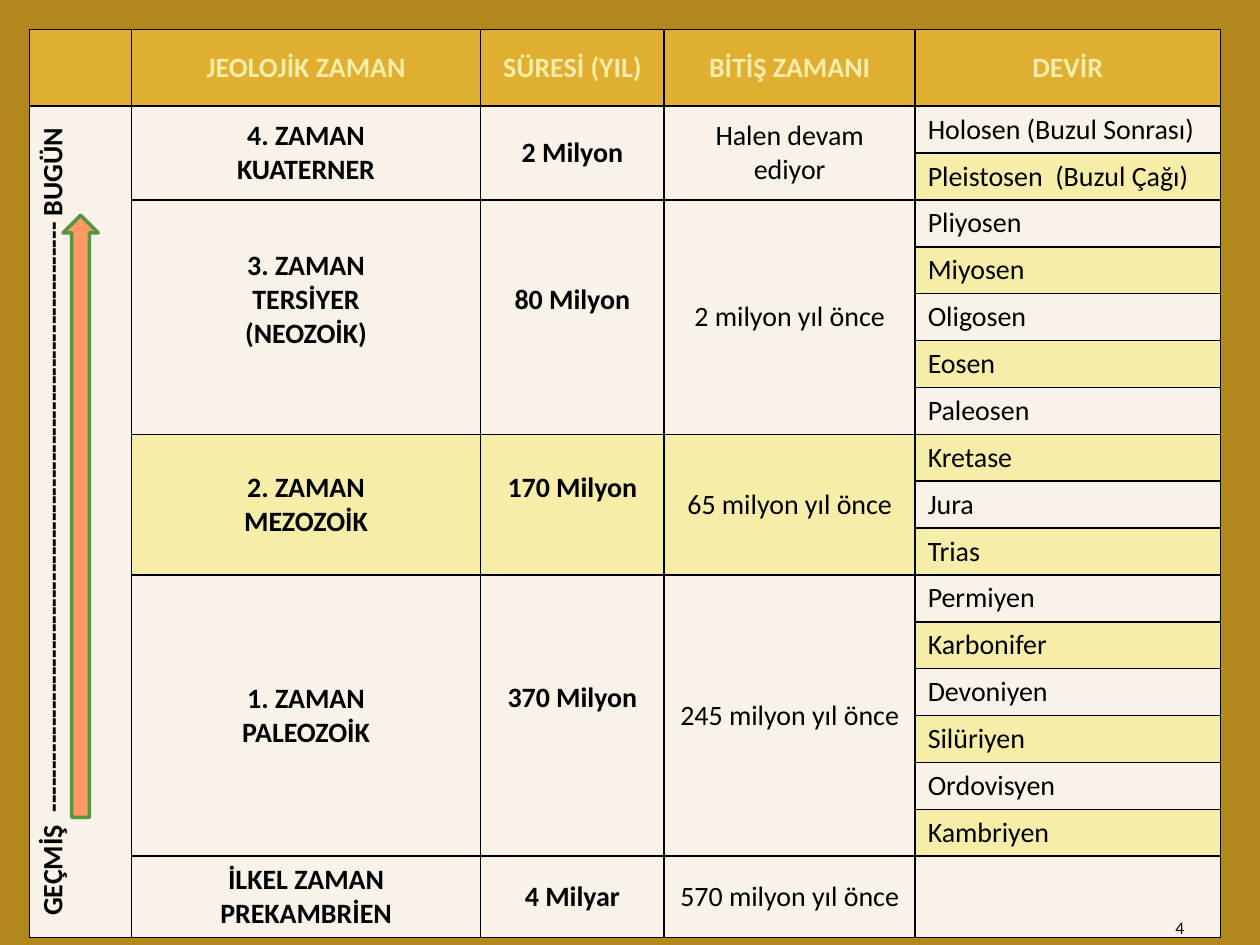
from pptx import Presentation
from pptx.dml.color import RGBColor
from pptx.enum.shapes import MSO_SHAPE as SHAPE
from pptx.enum.text import MSO_ANCHOR as ANCHOR, PP_ALIGN as ALIGN
from pptx.oxml import parse_xml
from pptx.oxml.ns import nsdecls
from pptx.util import Cm, Pt

BROWN = RGBColor(0xB2, 0x87, 0x1B)
GOLD = RGBColor(0xE0, 0xAE, 0x31)
CREAM = RGBColor(0xF9, 0xF2, 0xE8)
YELLOW = RGBColor(0xF6, 0xED, 0xA8)
ORANGE = RGBColor(0xFF, 0x99, 0x66)
GREEN = RGBColor(0x55, 0x95, 0x43)
BLACK = RGBColor(0, 0, 0)
FONT = "Calibri"

HEADERS = ["", "JEOLOJİK ZAMAN", "SÜRESİ (YIL)", "BİTİŞ ZAMANI", "DEVİR"]
TIMELINE = "GEÇMİŞ  " + "-" * 69 + " BUGÜN"
# Era, duration, end, periods, fill, columns whose text sits half a line higher
ERAS = [
    ("4. ZAMAN\nKUATERNER", "2 Milyon", "Halen devam ediyor",
     ["Holosen (Buzul Sonrası)", "Pleistosen  (Buzul Çağı)"], CREAM, ()),
    ("3. ZAMAN\nTERSİYER\n(NEOZOİK)", "80 Milyon", "2 milyon yıl önce",
     ["Pliyosen", "Miyosen", "Oligosen", "Eosen", "Paleosen"], CREAM, (1, 2)),
    ("2. ZAMAN\nMEZOZOİK", "170 Milyon", "65 milyon yıl önce",
     ["Kretase", "Jura", "Trias"], YELLOW, (2,)),
    ("1. ZAMAN\nPALEOZOİK", "370 Milyon", "245 milyon yıl önce",
     ["Permiyen", "Karbonifer", "Devoniyen", "Silüriyen", "Ordovisyen",
      "Kambriyen"], CREAM, (2,)),
    ("İLKEL ZAMAN\nPREKAMBRİEN", "4 Milyar", "570 milyon yıl önce",
     [""], CREAM, ()),
]
COL_WIDTHS = [2.06, 7.04, 3.7, 5.06, 6.15]
HEAD_H, PERIOD_H, LAST_H = 1.55, 0.93, 1.6


def add_borders(cell):
    tc_pr = cell._tc.get_or_add_tcPr()
    for side in ("lnL", "lnR", "lnT", "lnB"):
        tc_pr.append(parse_xml(
            f'<a:{side} {nsdecls("a")} w="12700"><a:solidFill>'
            f'<a:srgbClr val="{BLACK}"/></a:solidFill></a:{side}>'))


def fill_cell(cell, fill):
    cell.fill.solid()
    cell.fill.fore_color.rgb = fill


def write(tf, text, size=16, bold=False, color=BLACK, align=ALIGN.CENTER):
    tf.text = text
    for p in tf.paragraphs:
        p.alignment = align
        p.font.name = FONT
        p.font.size = Pt(size)
        p.font.bold = bold
        p.font.color.rgb = color


def add_era(table, top, era):
    """Write one era from row top and return the row after it."""
    *summary, periods, fill, raised = era
    last = top + len(periods) - 1
    for col, text in enumerate(summary, start=1):
        cell = table.cell(top, col)
        if last > top:
            cell.merge(table.cell(last, col))
        for row in range(top, last + 1):
            fill_cell(table.cell(row, col), fill)
        cell.vertical_anchor = ANCHOR.MIDDLE
        if col in raised:
            cell.margin_bottom = Cm(0.82)
        write(cell.text_frame, text, bold=col < 3)
    for row, period in enumerate(periods, start=top):
        cell = table.cell(row, 4)
        # Period stripes alternate down the whole table
        fill_cell(cell, CREAM if row % 2 else YELLOW)
        write(cell.text_frame, period, align=ALIGN.LEFT)
    return last + 1


def add_time_table(slide, left, top):
    n_rows = 1 + sum(len(era[3]) for era in ERAS)
    heights = [HEAD_H] + [PERIOD_H] * (n_rows - 2) + [LAST_H]
    table = slide.shapes.add_table(
        n_rows, len(HEADERS), left, top,
        Cm(sum(COL_WIDTHS)), Cm(sum(heights))).table
    table.horz_banding = False
    for column, width in zip(table.columns, COL_WIDTHS):
        column.width = Cm(width)
    for row, height in zip(table.rows, heights):
        row.height = Cm(height)
    for cell in table.iter_cells():
        add_borders(cell)

    # Header row
    for cell, text in zip(table.rows[0].cells, HEADERS):
        fill_cell(cell, GOLD)
        cell.vertical_anchor = ANCHOR.MIDDLE
        write(cell.text_frame, text, bold=True, color=YELLOW)

    # Timeline column, read from bottom to top
    timeline = table.cell(1, 0)
    timeline.merge(table.cell(n_rows - 1, 0))
    for row in range(1, n_rows):
        fill_cell(table.cell(row, 0), CREAM)
    timeline.vertical_anchor = ANCHOR.TOP
    timeline._tc.get_or_add_tcPr().set("vert", "vert270")
    write(timeline.text_frame, TIMELINE, bold=True)

    # Eras and their periods
    row = 1
    for era in ERAS:
        row = add_era(table, row, era)


def add_time_arrow(slide, left, top, width, height):
    arrow = slide.shapes.add_shape(SHAPE.UP_ARROW, left, top, width, height)
    arrow.shadow.inherit = False
    arrow.fill.solid()
    arrow.fill.fore_color.rgb = ORANGE
    arrow.line.color.rgb = GREEN
    arrow.line.width = Pt(2)


def add_page_number(slide, left, top, width, height):
    tf = slide.shapes.add_textbox(left, top, width, height).text_frame
    tf.word_wrap = True
    write(tf, "4", size=10, align=ALIGN.RIGHT)


def main():
    prs = Presentation()
    prs.slide_width, prs.slide_height = Cm(25.4), Cm(19.05)
    slide = prs.slides.add_slide(prs.slide_layouts[6])
    slide.background.fill.solid()
    slide.background.fill.fore_color.rgb = BROWN
    add_time_table(slide, Cm(0.59), Cm(0.59))
    add_time_arrow(slide, Cm(1.27), Cm(4.34), Cm(0.71), Cm(12.14))
    add_page_number(slide, Cm(18.2), Cm(18.36), Cm(5.92), Cm(0.69))
    prs.save("out.pptx")


if __name__ == "__main__":
    main()
